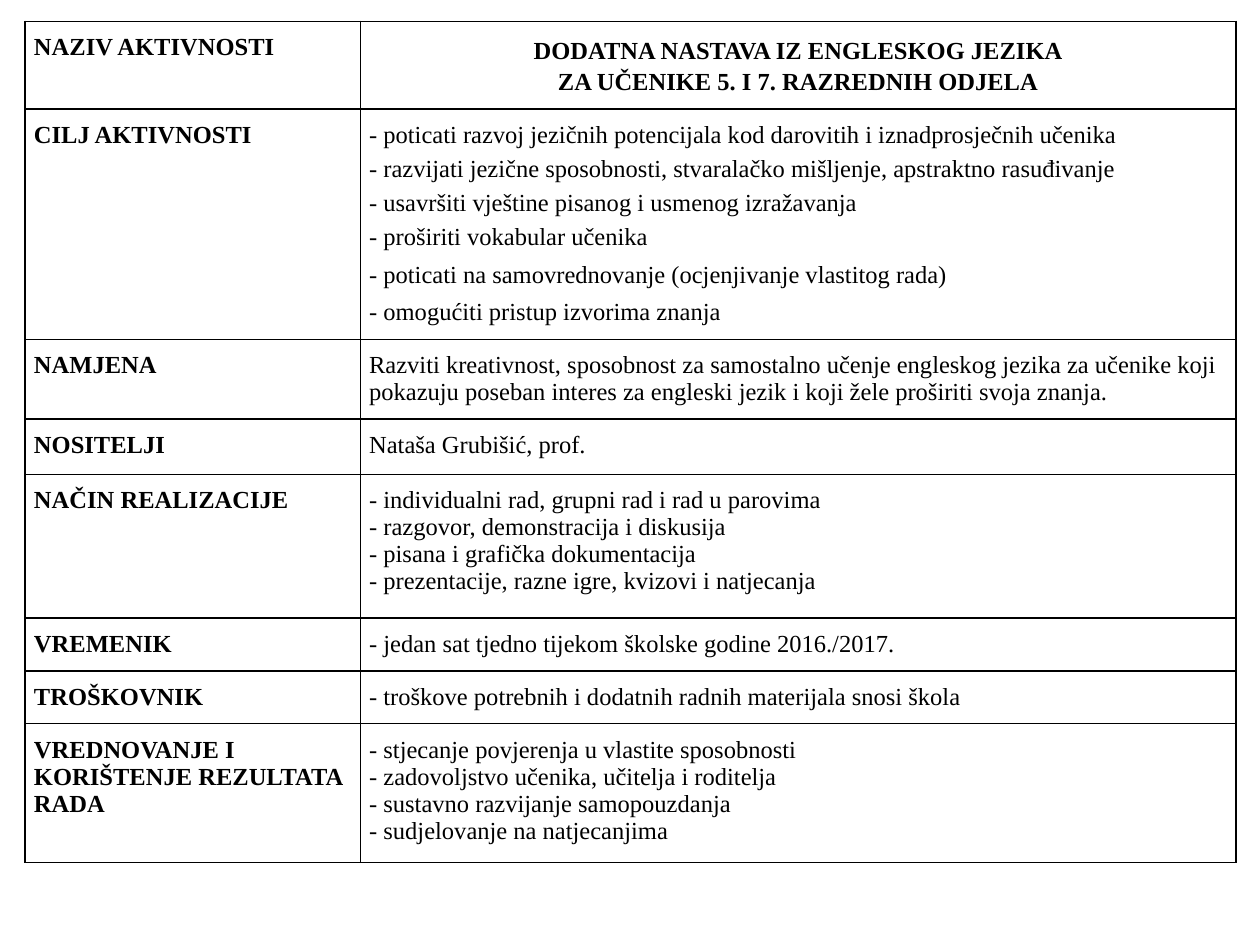
import pptx
import pptx.dml.color
import pptx.enum.text
import pptx.oxml
import pptx.oxml.ns
import pptx.util
from pptx.util import Inches

COLORS = {"text": "000000", "border": "000000", "cell": "FFFFFF"}

COLUMN_WIDTHS = [2.66, 6.95]

# Each row: height, label, lines of content
ROWS = [
    (0.69, "NAZIV AKTIVNOSTI", [
        "DODATNA NASTAVA IZ ENGLESKOG JEZIKA",
        "ZA UČENIKE 5. I 7. RAZREDNIH ODJELA"]),
    (1.83, "CILJ AKTIVNOSTI", [
        "- poticati razvoj jezičnih potencijala kod darovitih i iznadprosječnih učenika",
        "- razvijati jezične sposobnosti, stvaralačko mišljenje, apstraktno rasuđivanje",
        "- usavršiti vještine pisanog i usmenog izražavanja",
        "- proširiti vokabular učenika",
        "- poticati na samovrednovanje (ocjenjivanje vlastitog rada)",
        "- omogućiti pristup izvorima znanja"]),
    (0.63, "NAMJENA", [
        "Razviti kreativnost, sposobnost za samostalno učenje engleskog jezika za učenike "
        "koji pokazuju poseban interes za engleski jezik i koji žele proširiti svoja znanja."]),
    (0.44, "NOSITELJI", ["Nataša Grubišić, prof."]),
    (1.14, "NAČIN REALIZACIJE", [
        "- individualni rad, grupni rad i rad u parovima",
        "- razgovor, demonstracija i diskusija",
        "- pisana i grafička dokumentacija",
        "- prezentacije, razne igre, kvizovi i natjecanja"]),
    (0.42, "VREMENIK", ["- jedan sat tjedno tijekom školske godine 2016./2017."]),
    (0.42, "TROŠKOVNIK", ["- troškove potrebnih i dodatnih radnih materijala snosi škola"]),
    (1.10, "VREDNOVANJE I KORIŠTENJE REZULTATA RADA", [
        "- stjecanje povjerenja u vlastite sposobnosti",
        "- zadovoljstvo učenika, učitelja i roditelja",
        "- sustavno razvijanje samopouzdanja",
        "- sudjelovanje na natjecanjima"]),
]
GOAL_SPACE_BEFORE = [0, 4, 4, 4, 6, 6]


class SlideBuilder:
    font = "Times New Roman"
    size = pptx.util.Pt(14)

    def __init__(self, slide):
        self.slide = slide

    def color(self, name):
        return pptx.dml.color.RGBColor.from_string(COLORS[name])

    def table(self, left, top, column_widths, row_heights):
        table = self.slide.shapes.add_table(
            len(row_heights), len(column_widths), Inches(left), Inches(top),
            Inches(sum(column_widths)), Inches(sum(row_heights))).table
        table.first_row = False
        table.horz_banding = False
        for column, width in zip(table.columns, column_widths):
            column.width = Inches(width)
        for row, height in zip(table.rows, row_heights):
            row.height = Inches(height)
        return table

    def cell(self, cell, lines, bold=False):
        cell.margin_left = cell.margin_right = Inches(0.07)
        cell.margin_top = cell.margin_bottom = Inches(0.1)
        self.borders(cell)
        cell.fill.solid()
        cell.fill.fore_color.rgb = self.color("cell")
        frame = cell.text_frame
        for index, line in enumerate(lines):
            paragraph = frame.add_paragraph() if index else frame.paragraphs[0]
            run = paragraph.add_run()
            run.text = line
            run.font.name = self.font
            run.font.size = self.size
            run.font.bold = bold
            run.font.color.rgb = self.color("text")
        return frame.paragraphs

    def borders(self, cell):
        properties = cell._tc.get_or_add_tcPr()
        for side in ("lnL", "lnR", "lnT", "lnB"):
            properties.append(pptx.oxml.parse_xml(
                f'<a:{side} {pptx.oxml.ns.nsdecls("a")} w="12700"><a:solidFill>'
                f'<a:srgbClr val="{COLORS["border"]}"/></a:solidFill></a:{side}>'))


def main():
    presentation = pptx.Presentation()
    presentation.slide_width = Inches(10)
    presentation.slide_height = Inches(7.5)
    builder = SlideBuilder(presentation.slides.add_slide(presentation.slide_layouts[6]))

    # Activity table
    table = builder.table(0.2, 0.17, COLUMN_WIDTHS, [height for height, _, _ in ROWS])
    contents = []
    for index, (_, label, lines) in enumerate(ROWS):
        builder.cell(table.cell(index, 0), [label], bold=True)
        contents.append(builder.cell(table.cell(index, 1), lines, bold=index == 0))

    # Centred heading in the first row
    for paragraph in contents[0]:
        paragraph.alignment = pptx.enum.text.PP_ALIGN.CENTER
        paragraph.line_spacing = 1.15

    # Looser spacing in the list of goals
    for paragraph, space in zip(contents[1], GOAL_SPACE_BEFORE):
        paragraph.space_before = pptx.util.Pt(space)
    contents[1][-1].space_after = pptx.util.Pt(2)

    presentation.save("out.pptx")


if __name__ == "__main__":
    main()
